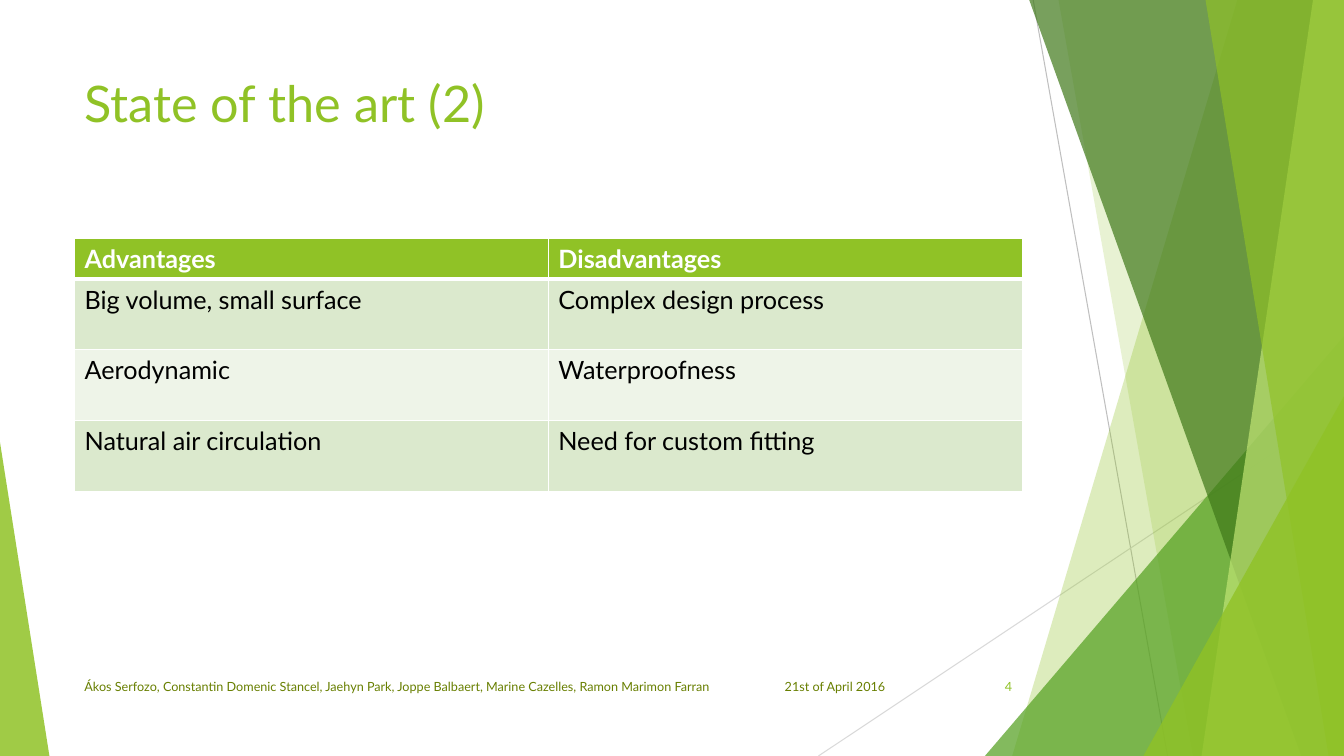
from lxml.etree import SubElement
from pptx import Presentation
from pptx.dml.color import RGBColor
from pptx.enum.shapes import MSO_CONNECTOR, MSO_SHAPE
from pptx.enum.text import MSO_ANCHOR, PP_ALIGN
from pptx.oxml.ns import qn
from pptx.util import Pt

WIDE, HIGH = 960, 540
LEFT, SPAN = 53.3, 676.8
FOOT, DEEP = 475.9, 28.8
LIME, OLIVE, WHITE, BLACK = "90C226", "687F00", "FFFFFF", "000000"


def color(code):
    return RGBColor.from_string(code)


def assign(item, **values):
    for name, value in values.items():
        setattr(item, name, value)


class Board:
    def __init__(self, slide, font):
        self.shapes = slide.shapes
        self.font = font

    def label(self, frame, text, size, code, bold=False, align=PP_ALIGN.LEFT):
        """Put one styled run of text into a text frame."""
        para = frame.paragraphs[0]
        para.alignment = align
        run = para.add_run()
        run.text = text
        assign(run.font, name=self.font, size=Pt(size), bold=bold)
        run.font.color.rgb = color(code)

    def text(self, box, text, size, code, anchor=MSO_ANCHOR.MIDDLE, **style):
        frame = self.shapes.add_textbox(*map(Pt, box)).text_frame
        assign(frame, word_wrap=True, vertical_anchor=anchor)
        self.label(frame, text, size, code, **style)

    def line(self, start, end, code):
        line = self.shapes.add_connector(
            MSO_CONNECTOR.STRAIGHT, *map(Pt, start + end))
        line.line.color.rgb = color(code)
        line.line.width = Pt(0.75)
        SubElement(line.element.spPr, qn("a:effectLst"))

    def tint(self, shape, code, alpha):
        """Fill a shape with a see-through colour, without outline or shadow."""
        shape.shadow.inherit = False
        shape.fill.solid()
        shape.fill.fore_color.rgb = color(code)
        mark = next(shape.element.spPr.iter(qn("a:srgbClr")))
        SubElement(mark, qn("a:alpha"), val=str(alpha * 1000))
        shape.line.fill.background()

    def band(self, top, foot, code, alpha, edge=WIDE):
        """Draw a slanted band from its left edge to the slide's right edge."""
        points = [(edge, -0.6), (edge, HIGH), (foot, HIGH), (top, -0.6)]
        points = [(Pt(x), Pt(y)) for x, y in points]
        build = self.shapes.build_freeform(*points[-1], scale=1.0)
        build.add_line_segments(points[:-1], close=True)
        self.tint(build.convert_to_shape(), code, alpha)

    def wedge(self, left, width, height, peak, code, alpha):
        """Draw a right triangle that stands on the slide's bottom edge."""
        shape = self.shapes.add_shape(
            MSO_SHAPE.ISOSCELES_TRIANGLE,
            *map(Pt, (left, HIGH - height, width, height)))
        shape.adjustments[0] = peak
        self.tint(shape, code, alpha)

    def border(self, cell, sides):
        props = cell._tc.get_or_add_tcPr()
        for side, width in sides.items():
            line = SubElement(props, qn(f"a:ln{side}"), w=str(Pt(width)))
            fill = SubElement(line, qn("a:solidFill"))
            SubElement(fill, qn("a:srgbClr"), val=WHITE)

    def table(self, box, rows, heights, fills):
        table = self.shapes.add_table(
            len(rows), len(rows[0]), *map(Pt, box)).table
        assign(table, first_row=False, horz_banding=False)
        for r, (row, height, code) in enumerate(zip(rows, heights, fills)):
            table.rows[r].height = Pt(height)
            head = r == 0
            for c, text in enumerate(row):
                cell = table.cell(r, c)
                self.border(cell, {"L": 1, "R": 1, "T": 3 if r == 1 else 1,
                                   "B": 3 if head else 1})
                cell.fill.solid()
                cell.fill.fore_color.rgb = color(code)
                self.label(cell.text_frame, text, 18,
                           WHITE if head else BLACK, bold=head)


def main():
    deck = Presentation()
    assign(deck, slide_width=Pt(WIDE), slide_height=Pt(HIGH))
    board = Board(deck.slides.add_slide(deck.slide_layouts[6]), "Lato")

    board.line((738, 0), (834, HIGH), "BFBFBF")
    board.line((WIDE, 290), (584.6, HIGH), "D9D9D9")
    board.band(884, 723, LIME, 30)
    board.band(756, 852, LIME, 20)
    board.wedge(703.5, 256.5, 300, 1, "54A021", 72)
    board.band(735, 929.5, "3F7819", 70)
    board.band(938, 858.3, "C0E474", 70)
    board.band(861, 949, LIME, 65)
    board.wedge(816.7, 143.3, 257, 1, LIME, 80)
    board.wedge(0, 35.3, 224, 0, LIME, 85)

    board.text((LEFT, 48, SPAN, 104), "State of the art (2)", 36, LIME,
               anchor=MSO_ANCHOR.TOP)
    rows = [
        ("Advantages", "Disadvantages"),
        ("Big volume, small surface", "Complex design process"),
        ("Aerodynamic", "Waterproofness"),
        ("Natural air circulation", "Need for custom fitting"),
    ]
    board.table((LEFT, 170.2, SPAN, 180.8), rows, [29.2] + [50.5] * 3,
                [LIME, "DBE9CD", "EEF4E8", "DBE9CD"])

    board.text((549.3, FOOT, 90, DEEP), "21st of April 2016", 9, OLIVE,
               align=PP_ALIGN.RIGHT)
    board.text((LEFT, FOOT, 496, DEEP),
               "Ákos Serfozo, Constantin Domenic Stancel, Jaehyn Park, "
               "Joppe Balbaert, Marine Cazelles, Ramon Marimon Farran",
               9, OLIVE)
    board.text((676.3, FOOT, 53.8, DEEP), "4", 9, LIME, align=PP_ALIGN.RIGHT)
    deck.save("out.pptx")


if __name__ == "__main__":
    main()
